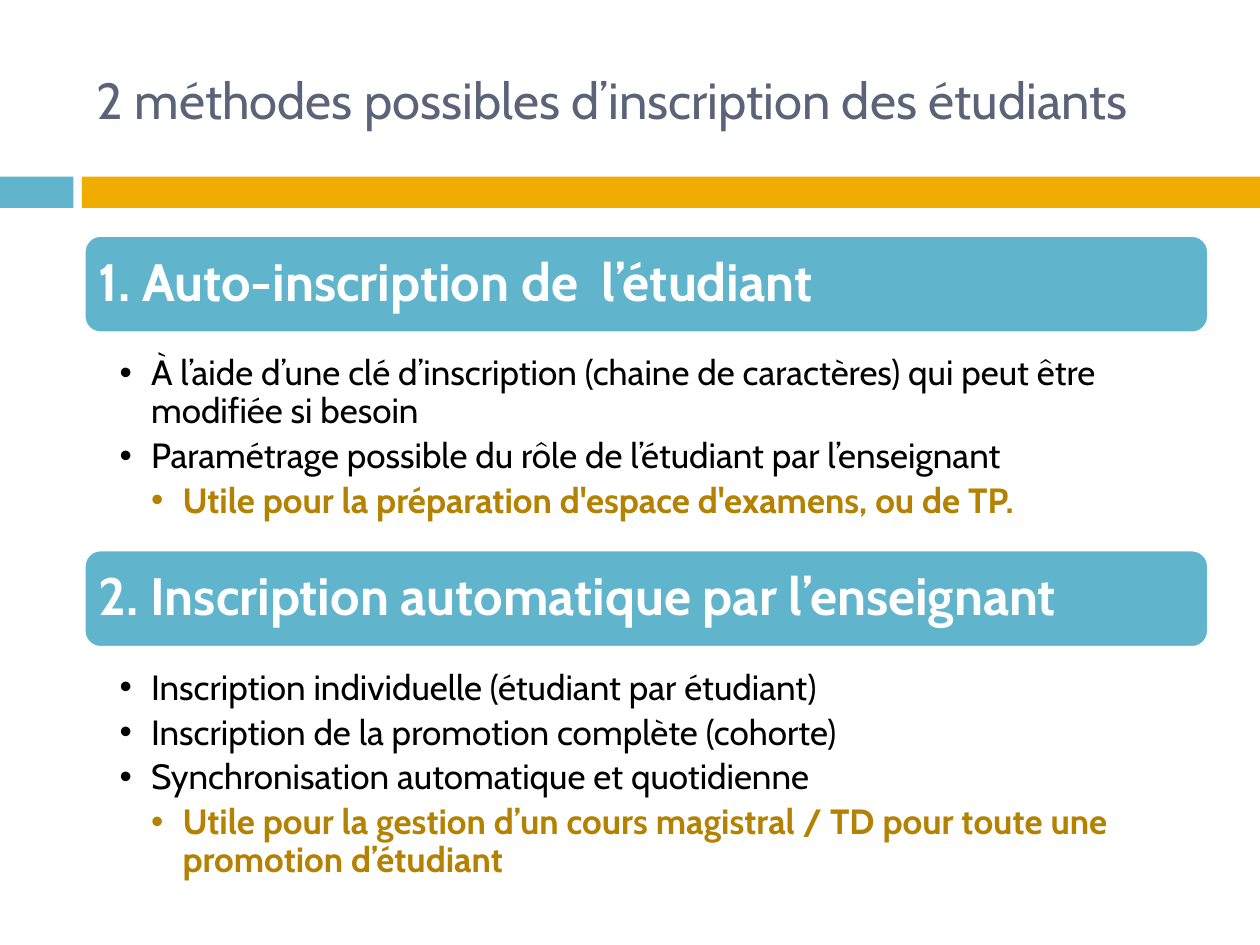
from dataclasses import dataclass

from lxml.etree import SubElement
from pptx import Presentation
from pptx.dml.color import RGBColor
from pptx.enum.shapes import MSO_SHAPE
from pptx.enum.text import MSO_ANCHOR, PP_ALIGN
from pptx.oxml.ns import qn
from pptx.util import Cm, Pt


@dataclass(frozen=True)
class Theme:
    font: str = "Cabin"
    blue: str = "60B5CC"
    amber: str = "F0AD00"
    slate: str = "5A6378"
    ochre: str = "B48200"
    black: str = "000000"
    white: str = "FFFFFF"
    title_size: int = 29
    heading_size: int = 30
    body_size: int = 20


theme = Theme()


def write(paragraph, text, size, color, bold=False, level=0, spacing=1.0, after=0):
    paragraph.alignment = PP_ALIGN.LEFT
    paragraph.line_spacing = spacing
    paragraph.space_after = Pt(after)
    run = paragraph.add_run()
    run.text = text
    run.font.name = theme.font
    run.font.size = Pt(size)
    run.font.bold = bold
    run.font.color.rgb = RGBColor.from_string(color)
    if level:
        paragraph.level = level
        properties = paragraph._p.get_or_add_pPr()
        properties.set("marL", str(Cm(0.635 * level)))
        properties.set("indent", str(-Cm(0.635)))
        SubElement(properties, qn("a:buFont"), typeface="Arial")
        SubElement(properties, qn("a:buChar"), char="•")


def add_block(kind, left, top, width, height, color):
    block = slide.shapes.add_shape(kind, Cm(left), Cm(top), Cm(width), Cm(height))
    block.shadow.inherit = False
    block.fill.solid()
    block.fill.fore_color.rgb = RGBColor.from_string(color)
    block.line.fill.background()
    return block


presentation = Presentation()
presentation.slide_width = Cm(25.4)
presentation.slide_height = Cm(19.05)
slide = presentation.slides.add_slide(presentation.slide_layouts[6])

for left, width, color in [(0, 1.48, theme.blue), (1.65, 23.75, theme.amber)]:
    add_block(MSO_SHAPE.RECTANGLE, left, 3.56, width, 0.63, color)

content_left, content_width = 1.7, 22.66
title = slide.shapes.add_textbox(
    Cm(content_left), Cm(0.64), Cm(content_width), Cm(2.74)
).text_frame
title.word_wrap = True
title.vertical_anchor = MSO_ANCHOR.MIDDLE
write(
    title.paragraphs[0],
    "2 méthodes possibles d’inscription des étudiants",
    size=theme.title_size,
    color=theme.slate,
)

methods = [
    (
        "1. Auto-inscription de  l’étudiant",
        [
            "À l’aide d’une clé d’inscription (chaine de caractères) qui peut être modifiée si besoin",
            "Paramétrage possible du rôle de l’étudiant par l’enseignant",
        ],
        "Utile pour la préparation d'espace d'examens, ou de TP.",
    ),
    (
        "2. Inscription automatique par l’enseignant",
        [
            "Inscription individuelle (étudiant par étudiant)",
            "Inscription de la promotion complète (cohorte)",
            "Synchronisation automatique et quotidienne",
        ],
        "Utile pour la gestion d’un cours magistral / TD pour toute une promotion d’étudiant",
    ),
]

for index, (heading, points, usage) in enumerate(methods):
    top = 4.75 + 6.34 * index
    banner = add_block(
        MSO_SHAPE.ROUNDED_RECTANGLE, content_left, top, content_width, 1.96, theme.blue
    )
    banner.line.color.rgb = RGBColor.from_string(theme.white)
    banner.line.width = Pt(1.5)
    banner_text = banner.text_frame
    banner_text.margin_left = banner_text.margin_right = Cm(0.2)
    banner_text.vertical_anchor = MSO_ANCHOR.MIDDLE
    write(
        banner_text.paragraphs[0],
        heading,
        size=theme.heading_size,
        color=theme.white,
        bold=True,
        spacing=0.9,
    )

    details = slide.shapes.add_textbox(
        Cm(content_left), Cm(top + 2.34), Cm(content_width), Cm(4.34)
    ).text_frame
    details.word_wrap = True
    details.margin_left, details.margin_right = Cm(0.71), Cm(0.41)
    details.margin_top = details.margin_bottom = Cm(0.08)
    lines = [(point, 1, theme.black) for point in points] + [(usage, 2, theme.ochre)]
    for position, (text, level, color) in enumerate(lines):
        write(
            details.add_paragraph() if position else details.paragraphs[0],
            text,
            size=theme.body_size,
            color=color,
            bold=level == 2,
            level=level,
            spacing=0.9,
            after=4,
        )

presentation.save("out.pptx")
